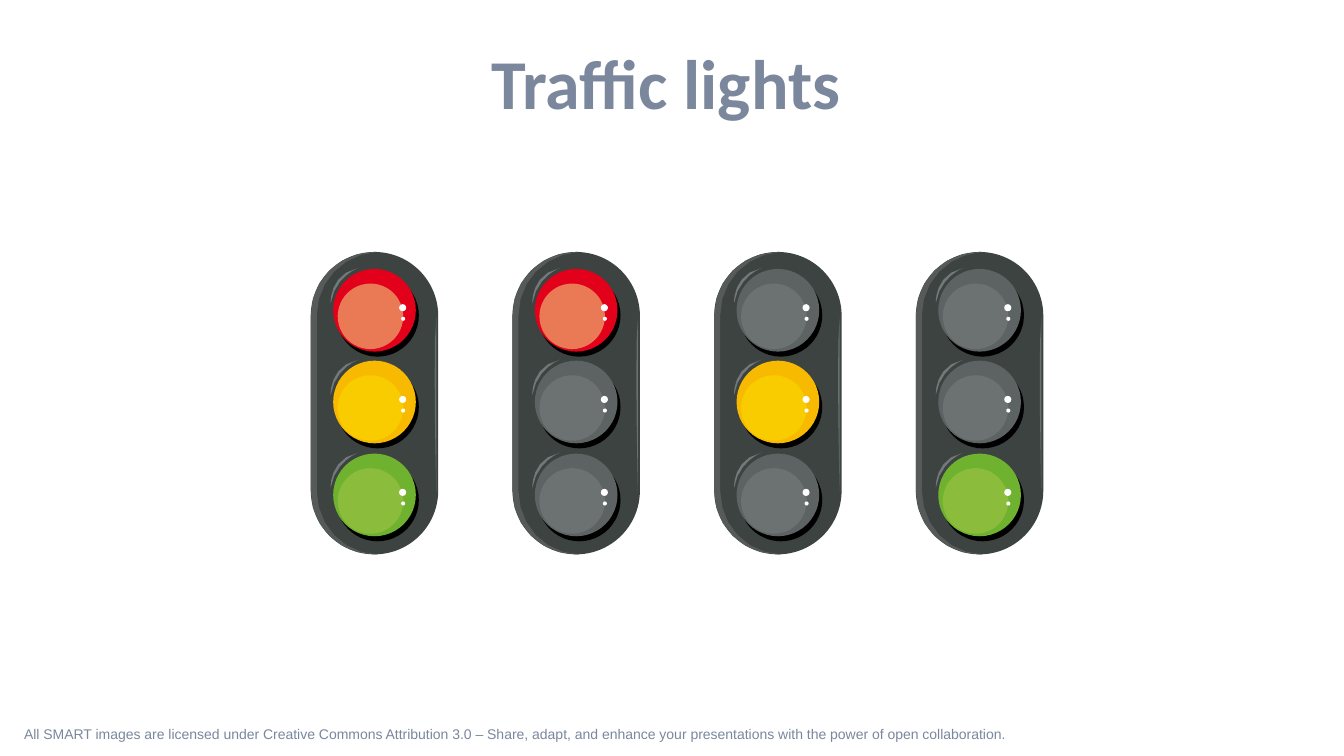
import pptx
import pptx.dml.color
import pptx.enum.shapes
import pptx.enum.text
import pptx.util

RGBColor = pptx.dml.color.RGBColor
SLATE = RGBColor(0x7B, 0x87, 0x9D)
HOUSING = RGBColor(0x3D, 0x43, 0x41)
EDGE = RGBColor(0x56, 0x5B, 0x5A)
GLEAM = RGBColor(0x73, 0x78, 0x7A)
GLINT = RGBColor(0x6A, 0x70, 0x71)
BLACK = RGBColor(0x00, 0x00, 0x00)
WHITE = RGBColor(0xFF, 0xFF, 0xFF)
RED = (RGBColor(0xE2, 0x00, 0x1A), RGBColor(0xEA, 0x79, 0x56))
AMBER = (RGBColor(0xF8, 0xBA, 0x00), RGBColor(0xF9, 0xCC, 0x00))
GREEN = (RGBColor(0x6F, 0xB2, 0x2F), RGBColor(0x8C, 0xBC, 0x3C))
OFF = (RGBColor(0x5D, 0x63, 0x63), RGBColor(0x6C, 0x72, 0x72))

COLUMNS, ROWS = 133.33, 75
CELL = pptx.util.Inches(0.1)
FIRST_COLUMN, TOP_ROW, PITCH = 30.83, 25, 20.01
HOUSING_WIDTH, HOUSING_HEIGHT = 12.64, 30
LAMP_COLUMN = 2.22
LAMP_ROWS = (1.68, 10.78, 20)
CURVE_STEPS = 6

LIGHTS = (
    (RED, AMBER, GREEN),
    (RED, OFF, OFF),
    (OFF, AMBER, OFF),
    (OFF, OFF, GREEN),
)

EDGE_OUTLINE = (
    (0.6, 23.7),
    (0.6, 6.3),
    (0.6, 2.9, 3.2, 0.2, 6.6, 0),
    (6.32, 0),
    (2.8, 0, 0, 2.8, 0, 6.3),
    (0, 23.7),
    (0, 27.2, 2.8, 30, 6.32, 30),
    (6.6, 30),
    (3.2, 29.9, 0.6, 27.1, 0.6, 23.7),
)
GLINT_OUTLINE = (
    (12.45, 6.5),
    (12.45, 23.8),
    (12.45, 23.8, 12.1, 9.5, 12.45, 6.5),
)
GLEAM_OUTLINE = (
    (2.5, -0.1),
    (2.5, -0.1, 0.2, 0.7, -0.25, 3.4),
    (-0.25, 3.4, -0.4, 0.5, 2.5, -0.1),
)


def cells(count):
    return pptx.util.Emu(round(count * CELL))


def paint(shape, color):
    shape.shadow.inherit = False
    shape.fill.solid()
    shape.fill.fore_color.rgb = color
    shape.line.fill.background()


def add_preset(group, kind, area, color):
    shape = group.shapes.add_shape(kind, *map(cells, area))
    paint(shape, color)
    return shape


def add_disc(group, column, row, size, color):
    oval = pptx.enum.shapes.MSO_SHAPE.OVAL
    add_preset(group, oval, (column, row, size, size), color)


def add_housing(group, column, row):
    rounded = pptx.enum.shapes.MSO_SHAPE.ROUNDED_RECTANGLE
    area = (column, row, HOUSING_WIDTH, HOUSING_HEIGHT)
    housing = add_preset(group, rounded, area, HOUSING)
    housing.adjustments[0] = 0.5


def curve_points(start, controls):
    first, second, end = controls[:2], controls[2:4], controls[4:]
    for step in range(1, CURVE_STEPS + 1):
        t = step / CURVE_STEPS
        u = 1 - t
        yield tuple(
            u ** 3 * a + 3 * u * u * t * b + 3 * u * t * t * c + t ** 3 * d
            for a, b, c, d in zip(start, first, second, end))


def add_outline(group, column, row, outline, color):
    points = [outline[0]]
    for segment in outline[1:]:
        if len(segment) == 2:
            points.append(segment)
        else:
            points.extend(curve_points(points[-1], segment))
    placed = [(cells(column + x), cells(row + y)) for x, y in points]
    builder = group.shapes.build_freeform(*placed[0])
    builder.add_line_segments(placed[1:], close=True)
    paint(builder.convert_to_shape(), color)


def add_lamp(group, column, row, colors):
    face, center = colors
    add_disc(group, column + 0.3, row + 0.5, 8.2, BLACK)
    add_disc(group, column, row, 8.2, face)
    add_disc(group, column + 0.45, row + 1.45, 6.5, center)
    add_disc(group, column + 6.55, row + 3.5, 0.7, WHITE)
    add_disc(group, column + 6.75, row + 4.75, 0.4, WHITE)
    add_outline(group, column, row, GLEAM_OUTLINE, GLEAM)


def add_traffic_light(page, column, row, lamps):
    group = page.shapes.add_group_shape()
    add_housing(group, column, row)
    add_outline(group, column, row, EDGE_OUTLINE, EDGE)
    for lamp_row, colors in zip(LAMP_ROWS, lamps):
        add_lamp(group, column + LAMP_COLUMN, row + lamp_row, colors)
    add_outline(group, column, row, GLINT_OUTLINE, GLINT)


def add_text(page, text, *, area, font, size, color, bold=False,
             align=pptx.enum.text.PP_ALIGN.LEFT,
             anchor=pptx.enum.text.MSO_ANCHOR.TOP, spacing=1.0):
    box = page.shapes.add_textbox(*map(cells, area))
    frame = box.text_frame
    frame.word_wrap = True
    frame.vertical_anchor = anchor
    para = frame.paragraphs[0]
    para.alignment = align
    para.line_spacing = spacing
    span = para.add_run()
    span.text = text
    span.font.name = font
    span.font.size = pptx.util.Pt(size)
    span.font.bold = bold
    span.font.color.rgb = color


def main():
    deck = pptx.Presentation()
    deck.slide_width = cells(COLUMNS)
    deck.slide_height = cells(ROWS)
    page = deck.slides.add_slide(deck.slide_layouts[6])
    add_text(
        page,
        "All SMART images are licensed under Creative Commons Attribution 3.0 "
        "– Share, adapt, and enhance your presentations with the power of "
        "open collaboration.",
        area=(1.4, 71.8, 100.6, 2.4), font="Arial", size=10, color=SLATE,
        spacing=0.8)
    add_text(
        page, "Traffic lights", area=(3.7, 0.8, 124.7, 14.6),
        font="Calibri", size=50, color=SLATE, bold=True,
        align=pptx.enum.text.PP_ALIGN.CENTER,
        anchor=pptx.enum.text.MSO_ANCHOR.MIDDLE)
    for index, lamps in enumerate(LIGHTS):
        add_traffic_light(page, FIRST_COLUMN + index * PITCH, TOP_ROW, lamps)
    deck.save("out.pptx")


if __name__ == "__main__":
    main()
